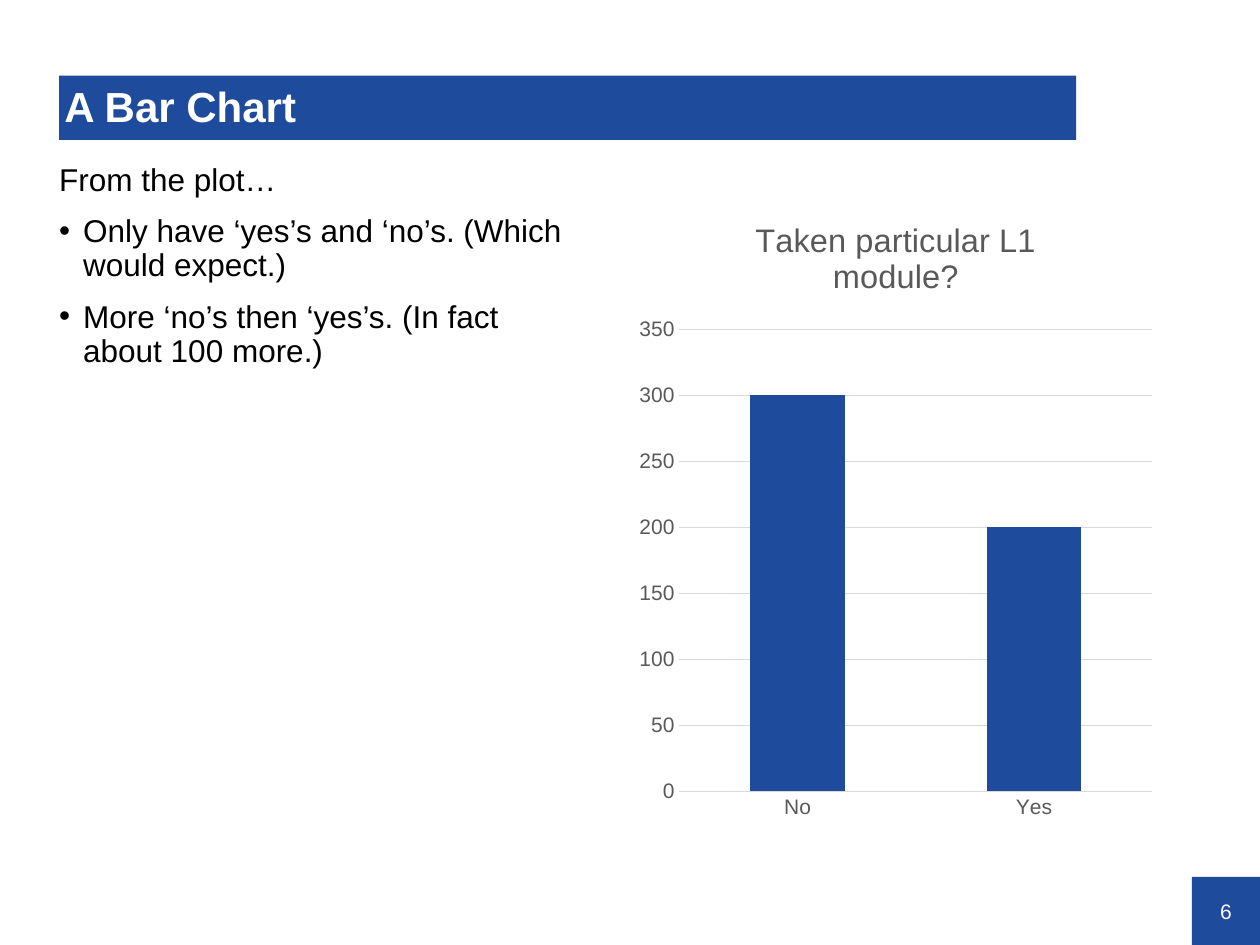
from dataclasses import dataclass

from lxml import etree
from pptx import Presentation
from pptx import util as u
from pptx.chart import data
from pptx.dml.color import RGBColor
from pptx.enum import chart as ch, shapes, text
from pptx.oxml.ns import qn


@dataclass(frozen=True)
class Theme:
    face: str = "Arial"
    blue: RGBColor = RGBColor(0x1E, 0x4B, 0x9B)
    white: RGBColor = RGBColor(0xFF, 0xFF, 0xFF)
    black: RGBColor = RGBColor(0, 0, 0)
    gray: RGBColor = RGBColor(0x59, 0x59, 0x59)
    rule: RGBColor = RGBColor(0xD9, 0xD9, 0xD9)
    head: float = 24
    body: float = 18
    label: float = 18.6
    small: float = 12


THEME = Theme()


def style(font, size, color, bold=False):
    font.name = THEME.face
    font.size = u.Pt(size)
    font.color.rgb = color
    font.bold = bold


def place(shape, box):
    shape.left, shape.top, shape.width, shape.height = map(u.Inches, box)


def inset(frame, left, top, right, bottom):
    frame.margin_left, frame.margin_top = u.Inches(left), u.Inches(top)
    frame.margin_right, frame.margin_bottom = u.Inches(right), u.Inches(bottom)
    frame.word_wrap = True
    frame.auto_size = text.MSO_AUTO_SIZE.NONE


def mark(para, sign=None):
    """Set a hanging bullet, or clear the inherited one."""
    props = para._p.get_or_add_pPr()
    hang = u.Inches(0.19) if sign else 0
    props.set("marL", str(hang))
    props.set("indent", str(-hang))
    if sign:
        etree.SubElement(props, qn("a:buChar")).set("char", sign)
    else:
        etree.SubElement(props, qn("a:buNone"))


def add_title(slide, box, words):
    title = slide.shapes.title
    place(title, box)
    title.fill.solid()
    title.fill.fore_color.rgb = THEME.blue
    frame = title.text_frame
    frame.text = words
    inset(frame, 0.04, 0.02, 0, 0)
    frame.vertical_anchor = text.MSO_ANCHOR.MIDDLE
    para = frame.paragraphs[0]
    para.alignment = text.PP_ALIGN.LEFT
    para.line_spacing = 0.9
    style(para.runs[0].font, THEME.head, THEME.white, True)


def add_points(slide, box, lead, points):
    body = slide.placeholders[1]
    place(body, box)
    frame = body.text_frame
    frame.text = "\n".join([lead, *points])
    inset(frame, 0.04, 0.04, 0.04, 0.04)
    for i, para in enumerate(frame.paragraphs):
        mark(para, "•" if i else None)
        para.line_spacing = 0.9
        para.space_before = u.Pt(10 if i else 0)
        style(para.runs[0].font, THEME.body, THEME.black)


def add_bars(slide, box, name, counts):
    table = data.CategoryChartData()
    table.categories = list(counts)
    table.add_series(name, list(counts.values()))
    chart = slide.shapes.add_chart(
        ch.XL_CHART_TYPE.COLUMN_STACKED, *map(u.Inches, box), table).chart
    style(chart.font, THEME.small, THEME.gray)
    chart.has_legend = False

    frame = chart.chart_title.text_frame
    frame.text = name
    style(frame.paragraphs[0].runs[0].font, THEME.label, THEME.gray)
    chart.chart_title.include_in_layout = False

    plot = chart.plots[0]
    plot.gap_width, plot.overlap = 150, 100
    plot.vary_by_categories = False
    fill = plot.series[0].format.fill
    fill.solid()
    fill.fore_color.rgb = THEME.blue

    cats, vals = chart.category_axis, chart.value_axis
    for axis in (cats, vals):
        axis.major_tick_mark = axis.minor_tick_mark = ch.XL_TICK_MARK.NONE
        style(axis.tick_labels.font, THEME.small, THEME.gray)
    vals.minimum_scale, vals.maximum_scale, vals.major_unit = 0, 350, 50
    vals.format.line.fill.background()
    for line in (cats.format.line, vals.major_gridlines.format.line):
        line.color.rgb = THEME.rule
        line.width = u.Pt(0.75)


def add_number(slide, box, number):
    tile = slide.shapes.add_shape(
        shapes.MSO_SHAPE.RECTANGLE, *map(u.Inches, box))
    tile.shadow.inherit = False
    tile.fill.solid()
    tile.fill.fore_color.rgb = THEME.blue
    tile.line.fill.background()
    frame = tile.text_frame
    frame.text = str(number)
    inset(frame, 0, 0, 0, 0)
    frame.vertical_anchor = text.MSO_ANCHOR.MIDDLE
    para = frame.paragraphs[0]
    para.alignment = text.PP_ALIGN.CENTER
    style(para.runs[0].font, THEME.small, THEME.white)


def main():
    deck = Presentation()
    deck.slide_width, deck.slide_height = u.Inches(10), u.Inches(7.5)
    slide = deck.slides.add_slide(deck.slide_layouts[1])
    add_number(slide, (9.46, 6.96, 0.54, 0.54), 6)
    add_points(slide, (0.43, 1.26, 4.22, 5.7), "From the plot…", [
        "Only have ‘yes’s and ‘no’s. (Which would expect.)",
        "More ‘no’s then ‘yes’s. (In fact about 100 more.)",
    ])
    add_title(slide, (0.47, 0.6, 8.07, 0.51), "A Bar Chart")
    add_bars(slide, (4.99, 1.53, 4.24, 5.07),
             "Taken particular L1 module?", {"No": 300, "Yes": 200})
    deck.save("out.pptx")


if __name__ == "__main__":
    main()
